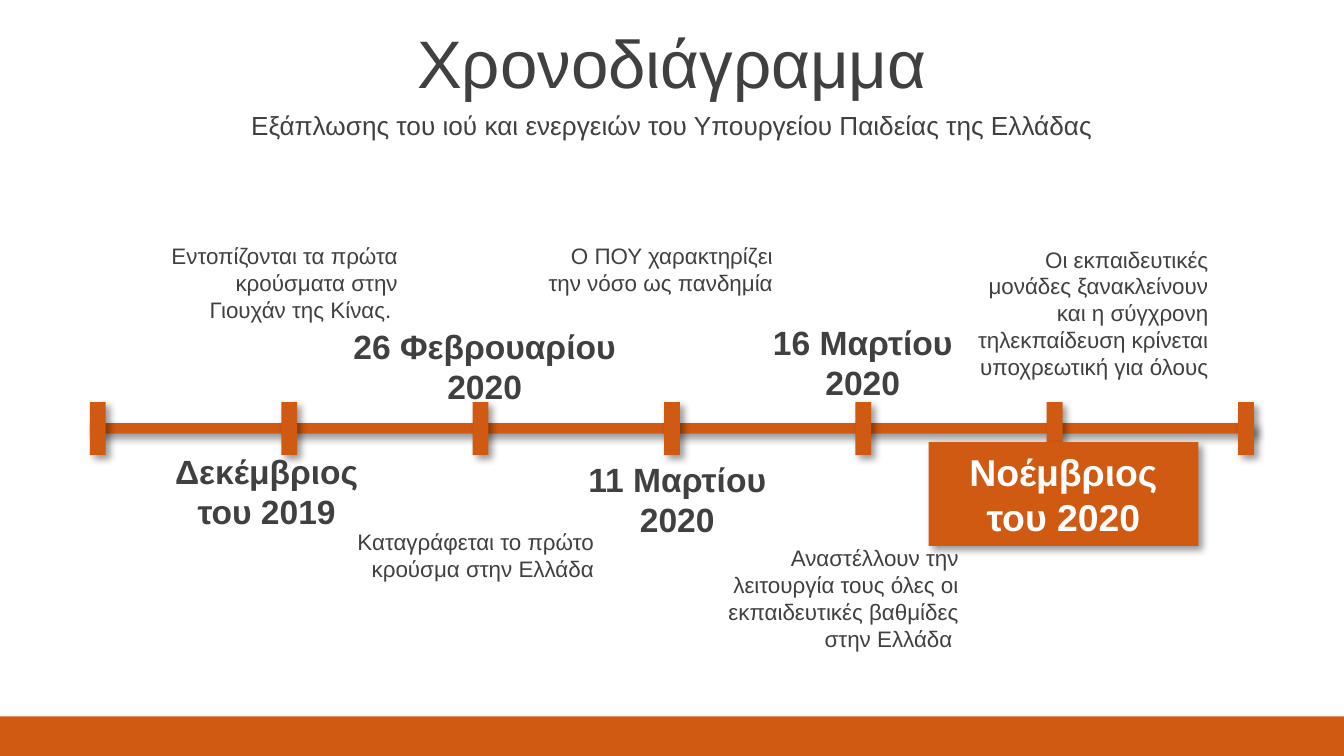
from lxml.etree import SubElement
from pptx import Presentation
from pptx.dml.color import RGBColor
from pptx.enum.shapes import MSO_SHAPE as Shape
from pptx.enum.text import MSO_ANCHOR as Anchor, MSO_AUTO_SIZE as AutoSize, PP_ALIGN as Align
from pptx.oxml.ns import qn
from pptx.util import Cm, Pt

ORANGE = RGBColor(0xD1, 0x5A, 0x12)
GREY = RGBColor(0x40, 0x40, 0x40)
WHITE = RGBColor(0xFF, 0xFF, 0xFF)
WIDTH, HEIGHT = 25.4, 14.29


class TimelineSlide:
    font = "Arial"

    def __init__(self, slide):
        self.slide = slide

    def add_text(self, shape, text, size, align, color=GREY, bold=False,
                 anchor=Anchor.MIDDLE, fit=AutoSize.SHAPE_TO_FIT_TEXT):
        frame = shape.text_frame
        frame.word_wrap = True
        frame.auto_size = fit
        frame.vertical_anchor = anchor
        paragraph = frame.paragraphs[0]
        paragraph.alignment = align
        paragraph.space_before = Pt(0)
        run = paragraph.add_run()
        run.text = text
        run.font.name, run.font.size = self.font, Pt(size)
        run.font.bold, run.font.color.rgb = bold, color

    def heading(self, index, text, size, top, height):
        holder = self.slide.placeholders[index]
        holder.left, holder.top = Cm(0), Cm(top)
        holder.width, holder.height = Cm(WIDTH), Cm(height)
        self.add_text(holder, text, size, Align.CENTER, fit=AutoSize.NONE)

    def block(self, left, top, width, height, shadow=True):
        block = self.slide.shapes.add_shape(
            Shape.RECTANGLE, Cm(left), Cm(top), Cm(width), Cm(height))
        block.fill.solid()
        block.fill.fore_color.rgb = ORANGE
        block.line.fill.background()
        block.shadow.inherit = False
        if shadow:
            effects = block._element.spPr.find(qn("a:effectLst"))
            outer = SubElement(effects, qn("a:outerShdw"), blurRad=str(Pt(4)),
                               dist=str(Pt(3)), dir="2700000", algn="tl", rotWithShape="0")
            black = SubElement(outer, qn("a:srgbClr"), val="000000")
            SubElement(black, qn("a:alpha"), val="40000")
        return block

    def textbox(self, left, top, width, height):
        return self.slide.shapes.add_textbox(Cm(left), Cm(top), Cm(width), Cm(height))

    def date(self, text, left, top, width):
        self.add_text(self.textbox(left, top, width, 1.8), text, 18, Align.CENTER, bold=True)

    def highlight(self, text, left, top, width, height):
        self.add_text(self.block(left, top, width, height), text, 20, Align.CENTER, WHITE, True)

    def event(self, text, left, top, height):
        self.add_text(self.textbox(left, top, 5.03, height), text, 12, Align.RIGHT,
                      anchor=Anchor.TOP)


def main():
    deck = Presentation()
    deck.slide_width, deck.slide_height = Cm(WIDTH), Cm(HEIGHT)
    timeline = TimelineSlide(deck.slides.add_slide(deck.slide_layouts[0]))

    # Footer band and headings
    timeline.block(0, 13.54, WIDTH, HEIGHT - 13.54, shadow=False)
    timeline.heading(0, "Χρονοδιάγραμμα", 36, 0.36, 1.6)
    timeline.heading(1, "Εξάπλωσης του ιού και ενεργειών του Υπουργείου Παιδείας της Ελλάδας",
                     14, 1.96, 0.8)

    # Axis with evenly spaced ticks
    axis_left, axis_width, tick_width, gaps = 1.7, 22, 0.3, 6
    timeline.block(axis_left, 8, axis_width, 0.2)
    step = (axis_width - tick_width) / gaps
    for tick in range(gaps + 1):
        timeline.block(axis_left + tick * step, 7.6, tick_width, 1)

    # Dates
    for date in (
        ("Δεκέμβριος του 2019", 2.74, 8.38, 4.6),
        ("26 Φεβρουαρίου 2020", 6.3, 6.02, 5.72),
        ("11 Μαρτίου 2020", 10.49, 8.53, 4.62),
        ("16 Μαρτίου 2020", 14.25, 5.94, 4.11),
    ):
        timeline.date(*date)
    timeline.highlight("Νοέμβριος του 2020", 17.55, 8.36, 5.1, 1.96)

    # Events
    for event in (
        ("Εντοπίζονται τα πρώτα κρούσματα στην Γιουχάν της Κίνας. ", 2.74, 4.45, 1.8),
        ("Καταγράφεται το πρώτο κρούσμα στην Ελλάδα", 6.45, 9.86, 1.27),
        ("Ο ΠΟΥ χαρακτηρίζει την νόσο ως πανδημία", 9.83, 4.45, 1.27),
        ("Αναστέλλουν την λειτουργία τους όλες οι εκπαιδευτικές βαθμίδες στην Ελλάδα ",
         13.34, 10.16, 2.31),
        ("Οι εκπαιδευτικές μονάδες ξανακλείνουν και η σύγχρονη τηλεκπαίδευση "
         "κρίνεται υποχρεωτική για όλους", 18.06, 4.52, 2.82),
    ):
        timeline.event(*event)

    deck.save("out.pptx")


if __name__ == "__main__":
    main()
